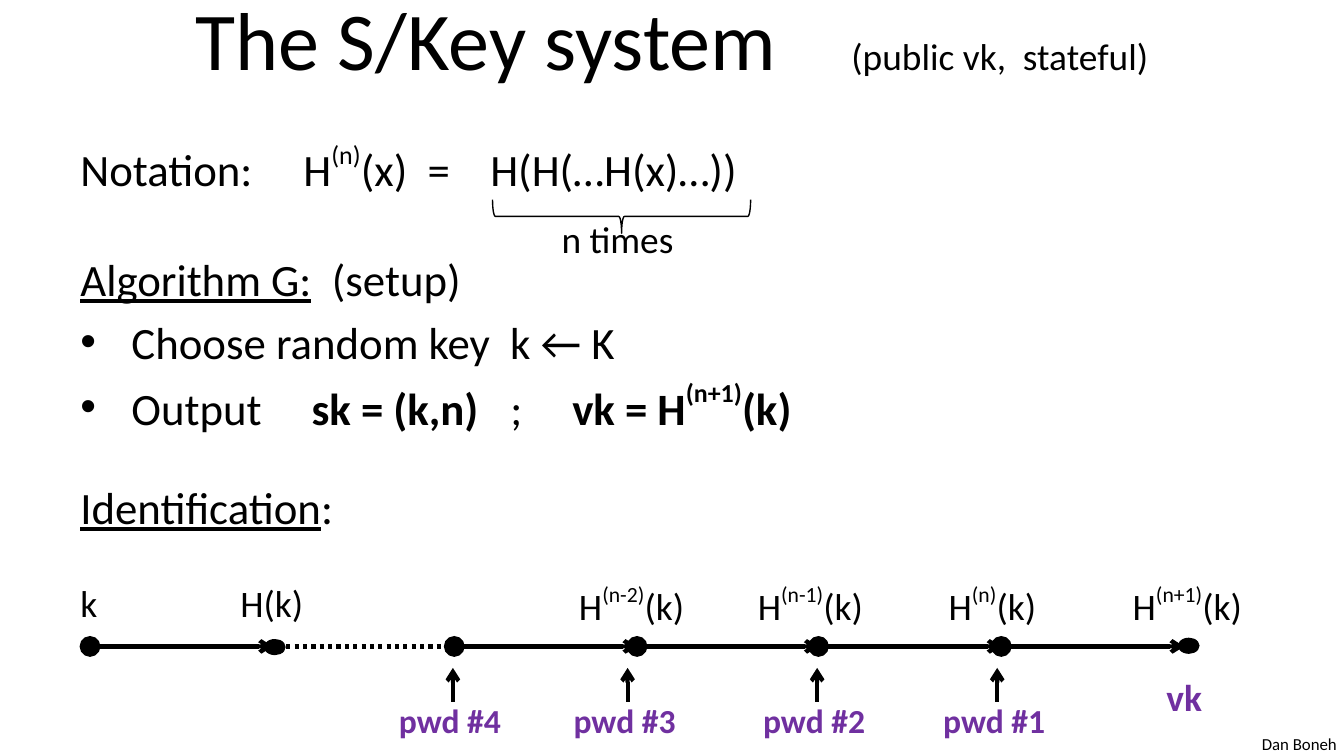
from lxml import etree
from pptx import Presentation
from pptx import util as u
from pptx.dml.color import RGBColor
from pptx.enum import dml, shapes, text
from pptx.oxml.ns import qn

PX = 9144  # EMU per px, 100 px to the inch
BLACK = RGBColor(0x00, 0x00, 0x00)
PURPLE = RGBColor(0x70, 0x30, 0xA0)
BOLD = {"bold": True}
UNDERLINE = {"underline": True}
SUP = {"baseline": 50000}
DOT = {"type": "oval", "w": "lg", "len": "lg"}
ARROW = {"type": "arrow"}


def px(*values):
    return [u.Emu(v * PX) for v in values]


class Board:
    """Style of the lecture slides and the slide being drawn."""
    font = "Calibri"

    def __init__(self, prs):
        self.s = prs.slides.add_slide(prs.slide_layouts[5])

    def runs(self, p, parts, size, color=BLACK, **base):
        for part in parts:
            words, extra = (part, {}) if isinstance(part, str) else part
            r = p.add_run()
            r.text = words
            r.font.color.rgb = color
            fmt = {"name": self.font, "size": u.Pt(size), **base, **extra}
            for key, value in fmt.items():
                if key in ("baseline", "spc"):
                    r.font._element.set(key, str(value))
                else:
                    setattr(r.font, key, value)

    def title(self, box, *rows):
        sp = self.s.shapes.title
        sp.left, sp.top, sp.width, sp.height = px(*box)
        tf = sp.text_frame
        tf.auto_size = text.MSO_AUTO_SIZE.NONE
        tf.vertical_anchor = text.MSO_ANCHOR.MIDDLE
        p = tf.paragraphs[0]
        p.alignment = text.PP_ALIGN.CENTER
        for parts, size in rows:
            self.runs(p, parts, size)

    def body(self, box, size, rows):
        tf = self.s.shapes.add_textbox(*px(*box)).text_frame
        tf.word_wrap = True
        for i, (before, bullet, tabs, parts) in enumerate(rows):
            p = tf.paragraphs[0] if i == 0 else tf.add_paragraph()
            p.space_before = u.Pt(before)
            pPr = p._p.get_or_add_pPr()
            if bullet:
                indent = 38 * PX
                pPr.set("marL", str(indent))
                pPr.set("indent", str(-indent))
                etree.SubElement(pPr, qn("a:buFont"), typeface="Arial")
                etree.SubElement(pPr, qn("a:buChar"), char="•")
            if tabs:
                stops = etree.SubElement(pPr, qn("a:tabLst"))
                for x in tabs:
                    etree.SubElement(stops, qn("a:tab"), pos=str(x * PX), algn="l")
            self.runs(p, parts, size)

    def label(self, box, parts, size=20, color=BLACK, **base):
        tf = self.s.shapes.add_textbox(*px(*box)).text_frame
        tf.word_wrap = False
        tf.auto_size = text.MSO_AUTO_SIZE.SHAPE_TO_FIT_TEXT
        self.runs(tf.paragraphs[0], parts, size, color, **base)

    def shape(self, kind, box, fill=None, rotation=0):
        sp = self.s.shapes.add_shape(kind, *px(*box))
        sp.shadow.inherit = False
        sp.rotation = rotation
        if fill is None:
            sp.fill.background()
        else:
            sp.fill.solid()
            sp.fill.fore_color.rgb = fill
        sp.line.color.rgb = BLACK
        sp.line.width = u.Pt(0.75)

    def line(self, x1, y1, x2, y2, head=None, tail=None, dash=None):
        c = self.s.shapes.add_connector(shapes.MSO_CONNECTOR.STRAIGHT, *px(x1, y1, x2, y2))
        c.line.color.rgb = BLACK
        c.line.width = u.Pt(2.25)
        if dash:
            c.line.dash_style = dash
        ln = c._element.spPr.find(qn("a:ln"))
        for tag, end in (("a:headEnd", head), ("a:tailEnd", tail)):
            if end:
                etree.SubElement(ln, qn(tag), **end)
        etree.SubElement(c._element.spPr, qn("a:effectLst"))


def main():
    prs = Presentation()
    prs.slide_width = u.Emu(1000 * PX)
    prs.slide_height = u.Emu(prs.slide_width * 9 // 16)
    b = Board(prs)

    # Lecturer, title and body
    b.label((929, 541, 76, 25), ["Dan Boneh"], 9)
    b.title((50, -19, 900, 94),
            (["The S/Key system", (" ", {"spc": 3000})], 44),
            (["(public vk,  stateful)"], 20))
    b.body((50, 98, 900, 448), 24, [
        (4.8, False, (166, 305), ["Notation:\tH", ("(n)", SUP), "(x)  =\tH(H(…H(x)…))"]),
        (30, False, (), [("Algorithm G:", UNDERLINE), "  (setup)"]),
        (4.8, True, (), ["Choose random key  k ← K"]),
        (4.8, True, (172, 320, 366),
         ["Output\t", ("sk = (k,n)", BOLD), "\t;\t", ("vk = H", BOLD),
          ("(n+1)", {**BOLD, **SUP}), ("(k)", BOLD)]),
        (24.2, False, (), [("Identification", UNDERLINE), ":"]),
    ])

    # Brace under the nested hashes
    b.shape(shapes.MSO_SHAPE.LEFT_BRACE, (450, 65, 25, 192), rotation=270)
    b.label((408, 156, 104, 44), ["n times"])

    # Hash chain: evenly spaced nodes, the second step dotted
    nodes = [round(67 + 135.6 * i) for i in range(7)]
    y = 481
    for i, (x1, x2) in enumerate(zip(nodes, nodes[1:])):
        if i == 1:
            b.line(x1 + 10, y, x2 - 10, y, dash=dml.MSO_LINE.ROUND_DOT)
        else:
            b.line(x1, y, x2, y, head=DOT, tail=ARROW)
    for x, top in ((197, 476), (877, 475)):
        b.shape(shapes.MSO_SHAPE.OVAL, (x, top, 15, 11), BLACK)

    # Values above the chain
    for x, w, value in ((50, 33, "k"), (169, 67, "H(k)")):
        b.label((x, 427, w, 44), [value])
    for x, w, power in ((421, 104, "(n-2)"), (554, 104, "(n-1)"),
                        (696, 89, "(n)"), (833, 107, "(n+1)")):
        b.label((x, 427, w, 44), ["H", (power, SUP), "(k)"])

    # Verification key and passwords below the chain
    b.label((858, 497, 48, 44), ["vk"], 20, PURPLE, **BOLD)
    for n, x in enumerate((742, 608, 467, 337), 1):
        b.line(x, 522, x, 497, tail=ARROW)
        b.label((x - 50, 516, 97, 40), [f"pwd #{n}"], 18, PURPLE, **BOLD)

    prs.save("out.pptx")


if __name__ == "__main__":
    main()
